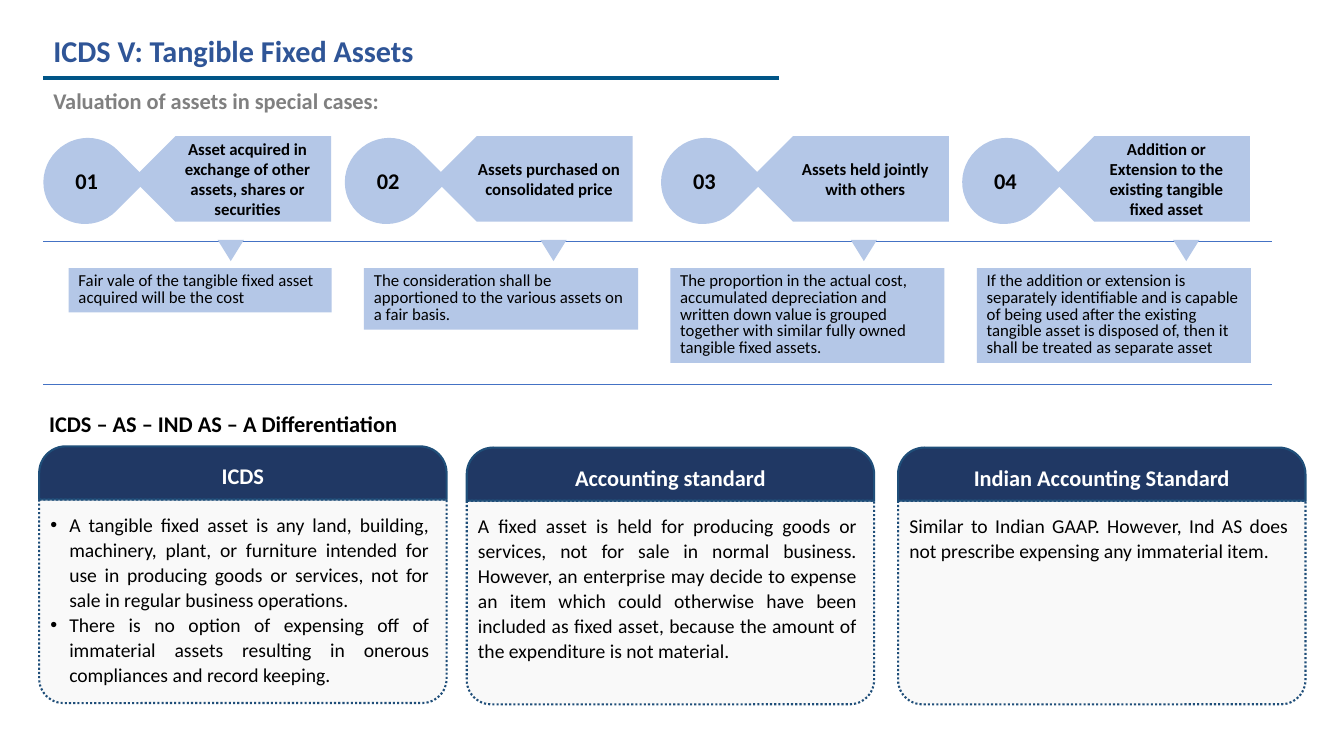
from pptx import Presentation
from pptx.dml.color import RGBColor
from pptx.enum import dml, shapes, text
from pptx.oxml.ns import qn
from pptx.util import Pt
from lxml import etree

MSO = shapes.MSO_SHAPE
ALIGN = text.PP_ALIGN
ANCHOR = text.MSO_ANCHOR
BLACK, WHITE, PALE = "000000", "FFFFFF", "B4C7E7"
NAVY, EDGE = "203864", "1F4E79"

prs = Presentation()
prs.slide_width, prs.slide_height = Pt(960), Pt(540)
s = prs.slides.add_slide(prs.slide_layouts[6])


def add(kind, box, fill=None, line=None):
    """Add a preset shape, or a text box when kind is None; box is in points."""
    box = [Pt(v) for v in box]
    if kind is None:
        return s.shapes.add_textbox(*box)
    sp = s.shapes.add_shape(kind, *box)
    sp.shadow.inherit = False
    sp.fill.solid()
    sp.fill.fore_color.rgb = RGBColor.from_string(fill)
    if line:
        sp.line.color.rgb = RGBColor.from_string(line)
        sp.line.width = Pt(1.5)
    else:
        sp.line.fill.background()
    return sp


def write(sp, lines, size, color=BLACK, bold=False, align=ALIGN.LEFT,
          anchor=ANCHOR.TOP, insets=(7.2, 3.6, 7.2, 3.6)):
    """Fill a shape with paragraphs; insets are left, top, right, bottom."""
    tf = sp.text_frame
    tf.word_wrap = True
    tf.vertical_anchor = anchor
    tf.margin_left, tf.margin_top, tf.margin_right, tf.margin_bottom = map(Pt, insets)
    for i, line in enumerate(lines):
        p = tf.add_paragraph() if i else tf.paragraphs[0]
        p.alignment = align
        r = p.add_run()
        r.text = line
        r.font.name, r.font.size, r.font.bold = "Calibri", Pt(size), bold
        r.font.color.rgb = RGBColor.from_string(color)
    return tf.paragraphs


# Headings
write(add(None, (31, 24.5, 348, 22.3)), ["ICDS V: Tangible Fixed Assets"], 21.6,
      "2F5597", True, anchor=ANCHOR.MIDDLE)
write(add(None, (31, 59, 357, 26.6)), ["Valuation of assets in special cases:"], 16,
      "808080", True)
write(add(None, (28, 289.5, 882, 26.6)), ["ICDS – AS – IND AS – A Differentiation"], 16,
      bold=True)

# Rules: right end, height, colour, width
for right, y, color, width in [(556.5, 55.5, "005587", 3),
                               (908.6, 172.1, "4472C4", 0.5),
                               (908.6, 274.3, "4472C4", 0.5)]:
    rule = s.shapes.add_connector(shapes.MSO_CONNECTOR.STRAIGHT,
                                  Pt(31), Pt(y), Pt(right), Pt(y))
    rule.line.color.rgb = RGBColor.from_string(color)
    rule.line.width = Pt(width)
    etree.SubElement(rule.element.spPr, qn("a:effectLst"))

# Special cases: left, case, note box (left, width, height), pointer left, note
cases = [
    (31.5, "Asset acquired in exchange of other assets, shares or securities",
     (49, 188, 31.7), 155.5,
     "Fair vale of the tangible fixed asset acquired will be the cost"),
    (246.8, "Assets purchased on consolidated price",
     (260, 195.8, 43.9), 386,
     "The consideration shall be apportioned to the various assets on a fair basis."),
    (472.7, "Assets held jointly with others",
     (478.8, 195.8, 67.7), 607.7,
     "The proportion in the actual cost, accumulated depreciation and written down "
     "value is grouped together with similar fully owned tangible fixed assets."),
    (687.8, "Addition or Extension to the existing tangible fixed asset",
     (697.7, 195.8, 67.7), 838,
     "If the addition or extension is separately identifiable and is capable of being "
     "used after the existing tangible asset is disposed of, then it shall be treated "
     "as separate asset"),
]
for number, (x, case, (note_x, note_w, note_h), pointer_x, note) in enumerate(cases, 1):
    drop = add(MSO.TEAR, (x, 98, 60.5, 62.5), PALE)
    drop.rotation = 45
    badge = add(MSO.OVAL, (x + 9.5, 108.7, 41.8, 40.3), PALE)
    write(badge, [f"{number:02}"], 16, bold=True, align=ALIGN.CENTER,
          anchor=ANCHOR.MIDDLE, insets=(0, 3.6, 0, 3.6))
    plate = add(MSO.PENTAGON, (x + 63.3, 97.3, 141.8, 61), PALE)
    plate.element.spPr.find(qn("a:xfrm")).set("flipH", "1")
    write(plate, [case], 12, bold=True, align=ALIGN.CENTER,
          anchor=ANCHOR.MIDDLE, insets=(14.4, 3.6, 7.2, 3.6))
    note_box = add(MSO.RECTANGLE, (note_x, 191.5, note_w, note_h), PALE)
    p = write(note_box, [note], 12)[0]
    p.line_spacing = Pt(12)
    p.space_before = p.space_after = Pt(3)
    pointer = add(MSO.ISOSCELES_TRIANGLE, (pointer_x, 171.4, 18.7, 15.1), PALE)
    pointer.rotation = 180

# Comparison cards: left, top, heading, paragraphs
cards = [
    (28, 318.8, "ICDS",
     ["A tangible fixed asset is any land, building, machinery, plant, or furniture "
      "intended for use in producing goods or services, not for sale in regular "
      "business operations.",
      "There is no option of expensing off of immaterial assets resulting in onerous "
      "compliances and record keeping."]),
    (333.4, 319.7, "Accounting standard",
     ["A fixed asset is held for producing goods or services, not for sale in normal "
      "business. However, an enterprise may decide to expense an item which could "
      "otherwise have been included as fixed asset, because the amount of the "
      "expenditure is not material."]),
    (641.5, 319.7, "Indian Accounting Standard",
     ["Similar to Indian GAAP. However, Ind AS does not prescribe expensing any "
      "immaterial item."]),
]
for x, y, heading, points in cards:
    head = add(MSO.ROUND_2_SAME_RECTANGLE, (x, y, 291, 38), NAVY, EDGE)
    head.adjustments[0], head.adjustments[1] = 0.5, 0
    write(head, [heading], 16, WHITE, True, ALIGN.CENTER, ANCHOR.MIDDLE, (0, 7.2, 0, 8.6))
    body = add(MSO.ROUND_2_SAME_RECTANGLE, (x, y + 38, 291, 145.4), "ECECEC", EDGE)
    body.adjustments[0], body.adjustments[1] = 0, 0.12
    body.line.dash_style = dml.MSO_LINE.ROUND_DOT
    tint = body.element.spPr.find(qn("a:solidFill"))[0]
    etree.SubElement(tint, qn("a:alpha"), val="28000")
    for p in write(body, points, 14, align=ALIGN.JUSTIFY, insets=(2.9, 8.6, 7.2, 7.2)):
        p.line_spacing = 1.06
        if len(points) > 1:
            pPr = p._p.get_or_add_pPr()
            pPr.set("marL", str(Pt(13.5)))
            pPr.set("indent", str(-Pt(13.5)))
            etree.SubElement(pPr, qn("a:buFont"), typeface="Arial")
            etree.SubElement(pPr, qn("a:buChar"), char="•")

prs.save("out.pptx")
